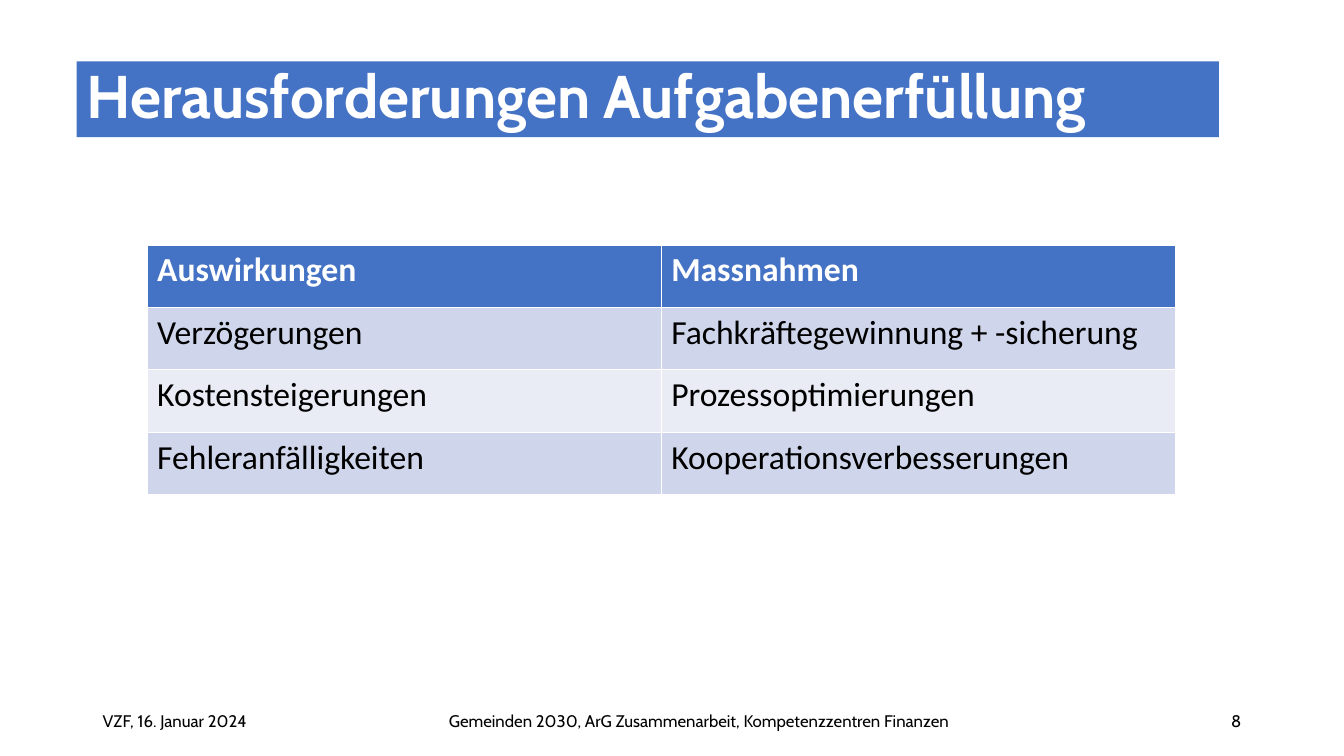
from dataclasses import dataclass

from pptx import Presentation
from pptx.dml.color import RGBColor
from pptx.enum.text import MSO_ANCHOR, PP_ALIGN
from pptx.slide import Slide
from pptx.text.text import Font
from pptx.util import Inches, Pt

SLIDE_WIDTH, SLIDE_HEIGHT = Inches(13.33), Inches(7.5)
COLOURS = {
    "accent": "4472C4",
    "band_dark": "CFD5EA",
    "band_light": "E9EBF5",
    "light_text": "FFFFFF",
    "dark_text": "000000",
}


@dataclass(frozen=True)
class Area:
    """A rectangle in percent of the slide's width and height."""

    left: float
    top: float
    width: float
    height: float

    def lengths(self) -> tuple[int, int, int, int]:
        return (
            round(SLIDE_WIDTH * self.left / 100),
            round(SLIDE_HEIGHT * self.top / 100),
            round(SLIDE_WIDTH * self.width / 100),
            round(SLIDE_HEIGHT * self.height / 100),
        )


@dataclass(frozen=True)
class FooterPart:
    wording: str
    left: float
    width: float
    alignment: PP_ALIGN


TITLE_AREA = Area(5.7, 8.13, 85, 10)
TABLE_AREA = Area(10.95, 32.4, 76.5, 33.07)
FOOTER_TOP, FOOTER_HEIGHT = 92.67, 5.33

MEASURES = [
    ("Auswirkungen", "Massnahmen"),
    ("Verzögerungen", "Fachkräftegewinnung + -sicherung"),
    ("Kostensteigerungen", "Prozessoptimierungen"),
    ("Fehleranfälligkeiten", "Kooperationsverbesserungen"),
]
FOOTER = [
    FooterPart("VZF, 16. Januar 2024", 6.9, 12.68, PP_ALIGN.LEFT),
    FooterPart("Gemeinden 2030, ArG Zusammenarbeit, Kompetenzzentren Finanzen",
               32.11, 39.83, PP_ALIGN.CENTER),
    FooterPart("8", 79.37, 13.73, PP_ALIGN.RIGHT),
]


def colour(name: str) -> RGBColor:
    return RGBColor.from_string(COLOURS[name])


def set_font(font: Font, family: str, size: int, colour_name: str, bold: bool = False) -> None:
    font.name, font.size, font.bold = family, Pt(size), bold
    font.color.rgb = colour(colour_name)


def add_title(slide: Slide, wording: str) -> None:
    title = slide.shapes.title
    title.left, title.top, title.width, title.height = TITLE_AREA.lengths()
    title.fill.solid()
    title.fill.fore_color.rgb = colour("accent")
    frame = title.text_frame
    frame.text = wording
    frame.word_wrap = True
    frame.vertical_anchor = MSO_ANCHOR.TOP
    paragraph = frame.paragraphs[0]
    paragraph.alignment = PP_ALIGN.LEFT
    paragraph.line_spacing = 0.9
    set_font(paragraph.font, "Cabin", 43, "light_text", bold=True)


def add_measures_table(slide: Slide) -> None:
    table = slide.shapes.add_table(
        len(MEASURES), len(MEASURES[0]), *TABLE_AREA.lengths()).table
    for row, entries in enumerate(MEASURES):
        is_header = row == 0
        band = "accent" if is_header else "band_dark" if row % 2 else "band_light"
        for column, entry in enumerate(entries):
            cell = table.cell(row, column)
            cell.text = entry
            cell.fill.solid()
            cell.fill.fore_color.rgb = colour(band)
            set_font(cell.text_frame.paragraphs[0].font, "Calibri", 24,
                     "light_text" if is_header else "dark_text", bold=is_header)


def add_footer_part(slide: Slide, part: FooterPart) -> None:
    area = Area(part.left, FOOTER_TOP, part.width, FOOTER_HEIGHT)
    frame = slide.shapes.add_textbox(*area.lengths()).text_frame
    frame.text = part.wording
    frame.word_wrap = True
    frame.vertical_anchor = MSO_ANCHOR.MIDDLE
    paragraph = frame.paragraphs[0]
    paragraph.alignment = part.alignment
    set_font(paragraph.font, "Cabin", 12, "dark_text")


def main() -> None:
    presentation = Presentation()
    presentation.slide_width, presentation.slide_height = SLIDE_WIDTH, SLIDE_HEIGHT
    title_only = presentation.slide_layouts.get_by_name("Title Only")
    slide = presentation.slides.add_slide(title_only)
    add_title(slide, "Herausforderungen Aufgabenerfüllung")
    for part in FOOTER:
        add_footer_part(slide, part)
    add_measures_table(slide)
    presentation.save("out.pptx")


if __name__ == "__main__":
    main()
